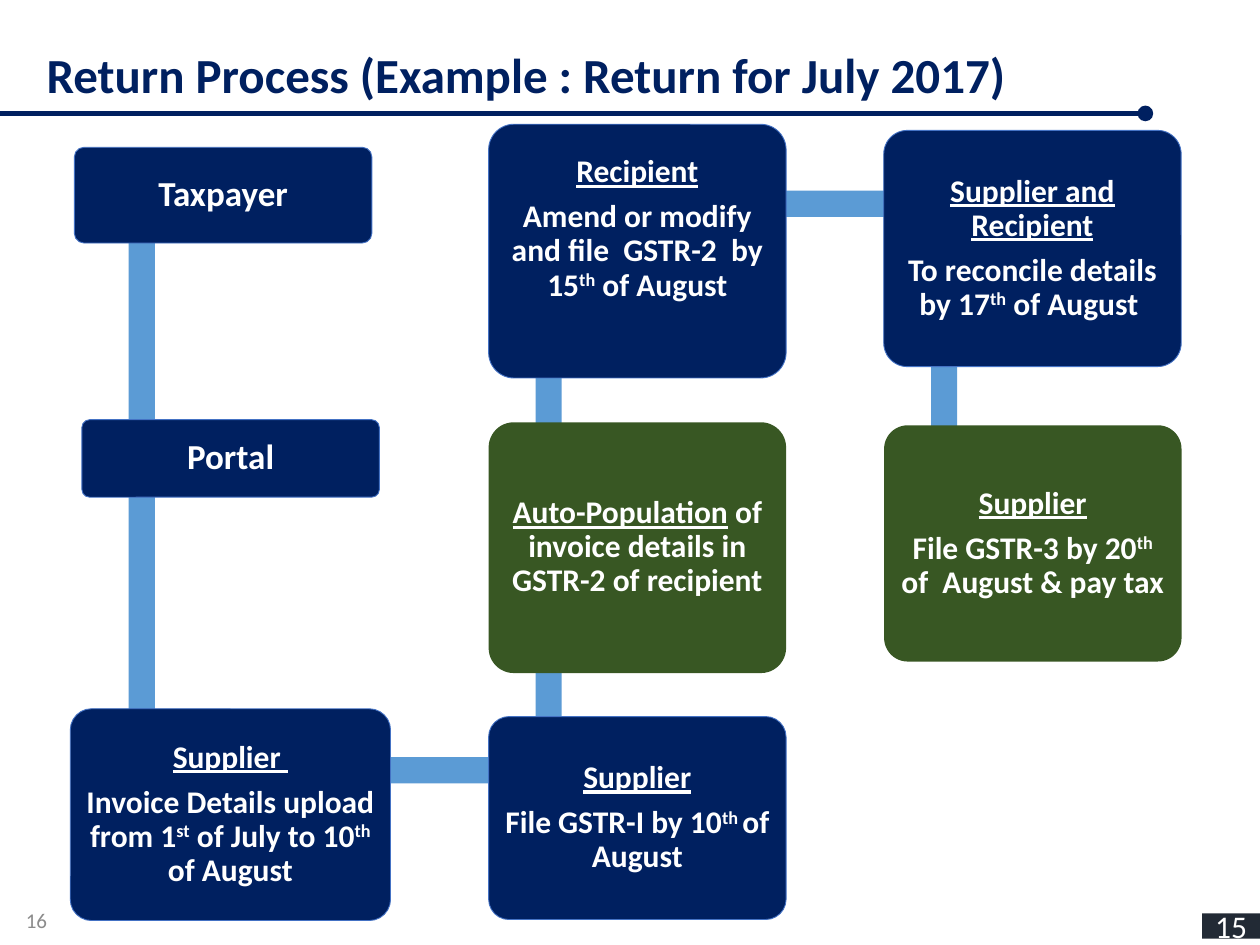
from lxml import etree
from pptx import Presentation
from pptx.dml.color import RGBColor
from pptx.enum import shapes, text
from pptx.oxml import ns
from pptx.util import Pt

NAVY = RGBColor(0x00, 0x20, 0x60)
GREEN = RGBColor(0x38, 0x57, 0x23)
BLUE = RGBColor(0x5B, 0x9B, 0xD5)
EDGE = RGBColor(0x44, 0x72, 0xC4)
DARK = RGBColor(0x22, 0x2A, 0x35)
GREY = RGBColor(0x8C, 0x8C, 0x8C)
WHITE = RGBColor(0xFF, 0xFF, 0xFF)
FONT = "Calibri"
BAR = 15  # thickness of the flow bars

# Flow bars: left, top, length, direction
BARS = [
    (73.5, 86, 150, "down"),
    (73.5, 236, 203, "down"),
    (81, 432.7, 233, "across"),
    (306, 287, 153, "down"),
    (306, 118, 168, "down"),
    (313, 109, 225, "across"),
    (532, 117, 168, "down"),
]

# Steps: box, fill, size, extra bottom inset, paragraphs
# In the paragraphs _..._ is underlined and ^...^ is superscript
STEPS = [
    ((42.5, 84.2, 170, 54.7), NAVY, 20, 0, ["Taxpayer"]),
    ((46.8, 239.8, 170, 44.3), NAVY, 20, 0, ["Portal"]),
    ((40.2, 405, 183, 121), NAVY, 18, 0,
     ["_Supplier _", "Invoice Details upload from 1^st^ of July to 10^th ^of August"]),
    ((279.2, 409.5, 170, 116), NAVY, 18, 0,
     ["_Supplier_", "File GSTR-I by 10^th ^of August"]),
    ((279.2, 241.3, 170, 143.3), GREEN, 18, 0,
     ["_Auto-Population_ of invoice details in GSTR-2 of recipient"]),
    ((279.2, 71, 170, 145), NAVY, 18, 25,
     ["_Recipient_", "Amend or modify and file  GSTR-2  by 15^th^ of August"]),
    ((505, 74.5, 170, 135), NAVY, 18, 0,
     ["_Supplier and Recipient_", "To reconcile details by 17^th^ of August "]),
    ((505.2, 243, 170, 135), GREEN, 18, 0,
     ["_Supplier_", "File GSTR-3 by 20^th^ of  August & pay tax"]),
]


def style(p, size, color, align, bold=False):
    p.alignment = align
    f = p.font
    f.name, f.size, f.bold = FONT, Pt(size), bold
    f.color.rgb = color


def set_insets(tf, left, top, right, bottom):
    tf.margin_left, tf.margin_top = Pt(left), Pt(top)
    tf.margin_right, tf.margin_bottom = Pt(right), Pt(bottom)


def add_block(slide, kind, box, fill, line=None):
    sp = slide.shapes.add_shape(kind, *map(Pt, box))
    sp.shadow.inherit = False
    sp.fill.solid()
    sp.fill.fore_color.rgb = fill
    if line is None:
        sp.line.fill.background()
    else:
        sp.line.color.rgb = line
        sp.line.width = Pt(0.5)
    return sp


def add_runs(p, marked):
    for i, part in enumerate(marked.split("_")):
        for j, piece in enumerate(part.split("^")):
            if not piece:
                continue
            r = p.add_run()
            r.text = piece
            if i % 2:
                r.font.underline = True
            if j % 2:
                r.font._element.set("baseline", "30000")


def add_header(slide, box):
    # Title
    left, top, width, height = box
    title = slide.shapes.title
    title.left, title.top, title.width, title.height = map(Pt, box)
    tf = title.text_frame
    tf.auto_size = text.MSO_AUTO_SIZE.NONE
    tf.vertical_anchor = text.MSO_ANCHOR.BOTTOM
    p = tf.paragraphs[0]
    p.text = "Return Process (Example : Return for July 2017)"
    style(p, 28, NAVY, text.PP_ALIGN.LEFT, bold=True)

    # Rule with a round end
    y = Pt(top + height + 2.2)
    rule = slide.shapes.add_connector(shapes.MSO_CONNECTOR.STRAIGHT, 0, y, Pt(654.5), y)
    rule.line.color.rgb = NAVY
    rule.line.width = Pt(3)
    etree.SubElement(rule.line._get_or_add_ln(), ns.qn("a:tailEnd"), type="oval")
    etree.SubElement(rule._element.spPr, ns.qn("a:effectLst"))


def add_bar(slide, left, top, length, direction):
    size = (BAR, length) if direction == "down" else (length, BAR)
    add_block(slide, shapes.MSO_SHAPE.RECTANGLE, (left, top, *size), BLUE)


def add_step(slide, box, fill, size, extra, paragraphs):
    line = EDGE if fill == NAVY else None
    sp = add_block(slide, shapes.MSO_SHAPE.ROUNDED_RECTANGLE, box, fill, line)
    sp.adjustments[0] = 0.1
    tf = sp.text_frame
    tf.word_wrap = True
    tf.vertical_anchor = text.MSO_ANCHOR.MIDDLE
    set_insets(tf, 5, 5, 5, 5 + extra)
    for i, marked in enumerate(paragraphs):
        p = tf.add_paragraph() if i else tf.paragraphs[0]
        p.line_spacing = 0.9
        p.space_after = Pt(0.35 * size)
        style(p, size, WHITE, text.PP_ALIGN.CENTER, bold=True)
        add_runs(p, marked)


def add_page_numbers(slide, left_box, right_box):
    # Grey number at the left
    number = slide.shapes.add_textbox(*map(Pt, left_box))
    tf = number.text_frame
    tf.word_wrap = True
    tf.vertical_anchor = text.MSO_ANCHOR.MIDDLE
    p = tf.paragraphs[0]
    p.text = "16"
    style(p, 12, GREY, text.PP_ALIGN.RIGHT)

    # Dark tab at the right
    tab = add_block(slide, shapes.MSO_SHAPE.RECTANGLE, right_box, DARK)
    tf = tab.text_frame
    tf.vertical_anchor = text.MSO_ANCHOR.MIDDLE
    set_insets(tf, 0, 0, 0, 0)
    p = tf.paragraphs[0]
    p.text = "15"
    style(p, 18, WHITE, text.PP_ALIGN.CENTER)


def main():
    prs = Presentation()
    prs.slide_width, prs.slide_height = Pt(720), Pt(540)
    slide = prs.slides.add_slide(prs.slide_layouts[5])
    add_header(slide, (19.4, 16.6, 576, 46))
    # Bars lie behind the steps they join
    for bar in BARS:
        add_bar(slide, *bar)
    for step in STEPS:
        add_step(slide, *step)
    add_page_numbers(slide, (0, 511, 34, 29), (687, 522, 33, 14.4))
    prs.save("out.pptx")


if __name__ == "__main__":
    main()
